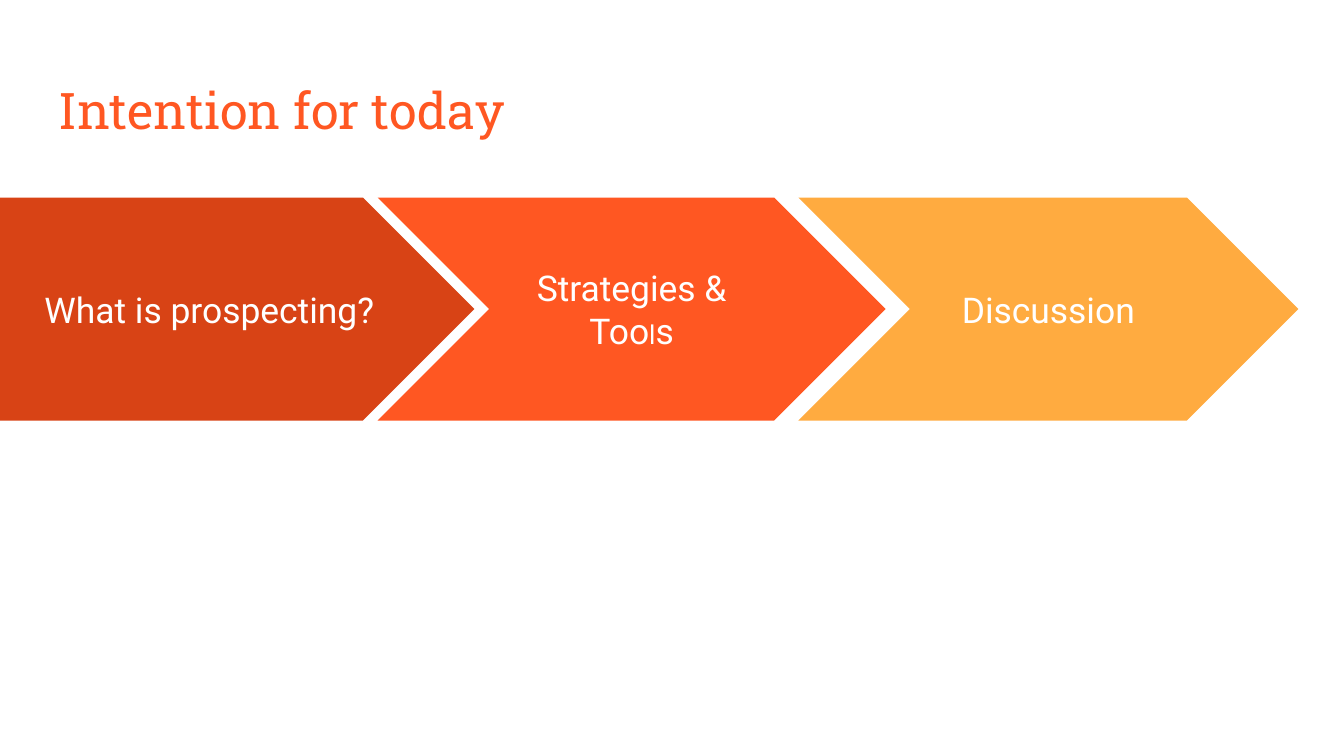
from pptx import Presentation
from pptx.dml.color import RGBColor
from pptx.enum.shapes import MSO_SHAPE as Kind
from pptx.enum.text import MSO_ANCHOR as Anchor, PP_ALIGN as Align
from pptx.util import Inches, Pt

TITLE = "Intention for today"
HEAD = {"name": "Roboto Slab", "size": Pt(27)}
BODY = {"name": "Roboto", "size": Pt(19)}
SMALL = {"name": "Roboto", "size": Pt(14)}
WIDE = 10
TALL = WIDE * 9 / 16
TOP, HIGH = 1.47, 1.66
STEPS = [
    (Kind.CHEVRON, 5.94, 3.72, "FFAB40", [("Discussion", BODY)]),
    (Kind.PENTAGON, 0, 3.53, "D84315", [("What is prospecting?", BODY)]),
    (Kind.CHEVRON, 2.81, 3.78, "FF5722",
     [("Strategies & Too", BODY), ("l", SMALL), ("s", BODY)]),
]


def color(code):
    return RGBColor.from_string(code)


def write(shape, runs, tint, align, anchor):
    frame = shape.text_frame
    frame.word_wrap = True
    frame.vertical_anchor = anchor
    for side in ("left", "top", "right", "bottom"):
        setattr(frame, f"margin_{side}", Inches(0.1))
    para = frame.paragraphs[0]
    para.alignment = align
    for text, style in runs:
        run = para.add_run()
        run.text = text
        run.font.color.rgb = color(tint)
        for key, value in style.items():
            setattr(run.font, key, value)


def add_step(slide, kind, left, width, fill, runs):
    step = slide.shapes.add_shape(
        kind, Inches(left), Inches(TOP), Inches(width), Inches(HIGH))
    step.adjustments[0] = 0.5
    step.shadow.inherit = False
    step.fill.solid()
    step.fill.fore_color.rgb = color(fill)
    step.line.fill.background()
    write(step, runs, "FFFFFF", Align.CENTER, Anchor.MIDDLE)


def main():
    deck = Presentation()
    deck.slide_width, deck.slide_height = Inches(WIDE), Inches(TALL)
    slide = deck.slides.add_slide(deck.slide_layouts[6])
    title = slide.shapes.add_textbox(
        Inches(0.34), Inches(0.49), Inches(9.32), Inches(0.63))
    write(title, [(TITLE, HEAD)], "FF5722", Align.LEFT, Anchor.TOP)
    for step in STEPS:
        add_step(slide, *step)
    deck.save("out.pptx")


if __name__ == "__main__":
    main()
